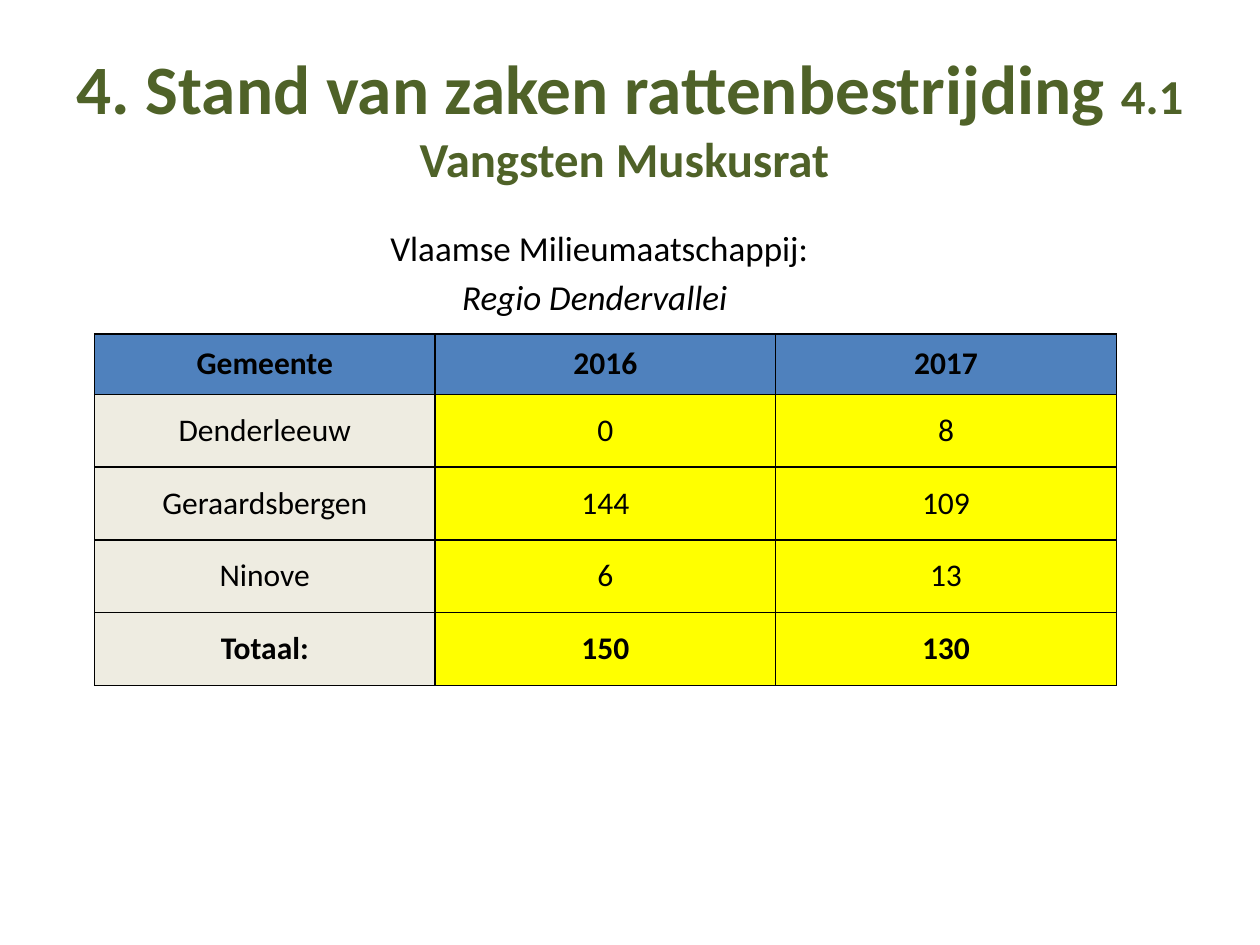
from pptx import Presentation
from pptx.dml.color import RGBColor
from pptx.enum.text import MSO_ANCHOR, MSO_AUTO_SIZE, PP_ALIGN
from pptx.oxml import parse_xml
from pptx.oxml.ns import nsdecls
from pptx.util import Inches, Pt

GREEN = RGBColor(0x4F, 0x62, 0x28)
BLUE = RGBColor(0x4F, 0x81, 0xBD)
CREAM = RGBColor(0xEE, 0xEC, 0xE1)
YELLOW = RGBColor(0xFF, 0xFF, 0x00)
BLACK = RGBColor(0, 0, 0)

CATCHES = [
    ("Gemeente", "2016", "2017"),
    ("Denderleeuw", "0", "8"),
    ("Geraardsbergen", "144", "109"),
    ("Ninove", "6", "13"),
    ("Totaal:", "150", "130"),
]


def style(font, size, color, bold=False, italic=False):
    font.name = "Calibri"
    font.size = Pt(size)
    font.color.rgb = color
    font.bold = bold
    font.italic = italic


def set_title(slide, left, top, width, height):
    title = slide.shapes.title
    title.left, title.top, title.width, title.height = left, top, width, height
    frame = title.text_frame
    frame.word_wrap = True
    frame.auto_size = MSO_AUTO_SIZE.NONE
    frame.vertical_anchor = MSO_ANCHOR.MIDDLE
    frame.margin_left = frame.margin_right = Inches(0.08)
    para = frame.paragraphs[0]
    para.alignment = PP_ALIGN.CENTER
    for text, size in (("4. Stand van zaken rattenbestrijding ", 39.6),
                       ("4.1 Vangsten Muskusrat ", 27.9)):
        run = para.add_run()
        run.text = text
        style(run.font, size, GREEN, bold=True)


def add_intro(slide, left, top, width, height):
    frame = slide.shapes.add_textbox(left, top, width, height).text_frame
    frame.word_wrap = True
    agency, region = frame.paragraphs[0], frame.add_paragraph()
    region.space_before = Pt(4)
    for para, text, indent, italic in (
            (agency, "Vlaamse Milieumaatschappij:", 2.5, False),
            (region, "Regio Dendervallei", 3.07, True)):
        para.text = text
        para.alignment = PP_ALIGN.LEFT
        para._p.get_or_add_pPr().set("marL", str(Inches(indent)))
        style(para.font, 20, BLACK, italic=italic)


def add_borders(cell):
    props = cell._tc.get_or_add_tcPr()
    for place, side in enumerate(("lnL", "lnR", "lnT", "lnB")):
        props.insert(place, parse_xml(
            f'<a:{side} {nsdecls("a")} w="{Pt(1)}"><a:solidFill>'
            f'<a:srgbClr val="{BLACK}"/></a:solidFill></a:{side}>'))


def add_catches(slide, left, top, width, height):
    head = Inches(0.48)
    table = slide.shapes.add_table(
        len(CATCHES), len(CATCHES[0]), left, top, width, height).table
    for col in table.columns:
        col.width = width // len(CATCHES[0])
    for i, values in enumerate(CATCHES):
        table.rows[i].height = (
            head if i == 0 else (height - head) // (len(CATCHES) - 1))
        for j, value in enumerate(values):
            cell = table.cell(i, j)
            cell.text = value
            cell.vertical_anchor = MSO_ANCHOR.MIDDLE
            cell.fill.solid()
            cell.fill.fore_color.rgb = (
                BLUE if i == 0 else CREAM if j == 0 else YELLOW)
            add_borders(cell)
            para = cell.text_frame.paragraphs[0]
            para.alignment = PP_ALIGN.CENTER
            style(para.font, 18, BLACK, bold=i in (0, len(CATCHES) - 1))


def main():
    deck = Presentation()
    deck.slide_width, deck.slide_height = Inches(10), Inches(7.5)
    slide = deck.slides.add_slide(deck.slide_layouts[5])
    set_title(slide, Inches(0.5), Inches(0.3), Inches(9), Inches(1.25))
    add_intro(slide, Inches(0.5), Inches(1.75), Inches(9), Inches(0.85))
    add_catches(slide, Inches(0.75), Inches(2.65), Inches(8.11), Inches(2.79))
    deck.save("out.pptx")


if __name__ == "__main__":
    main()
